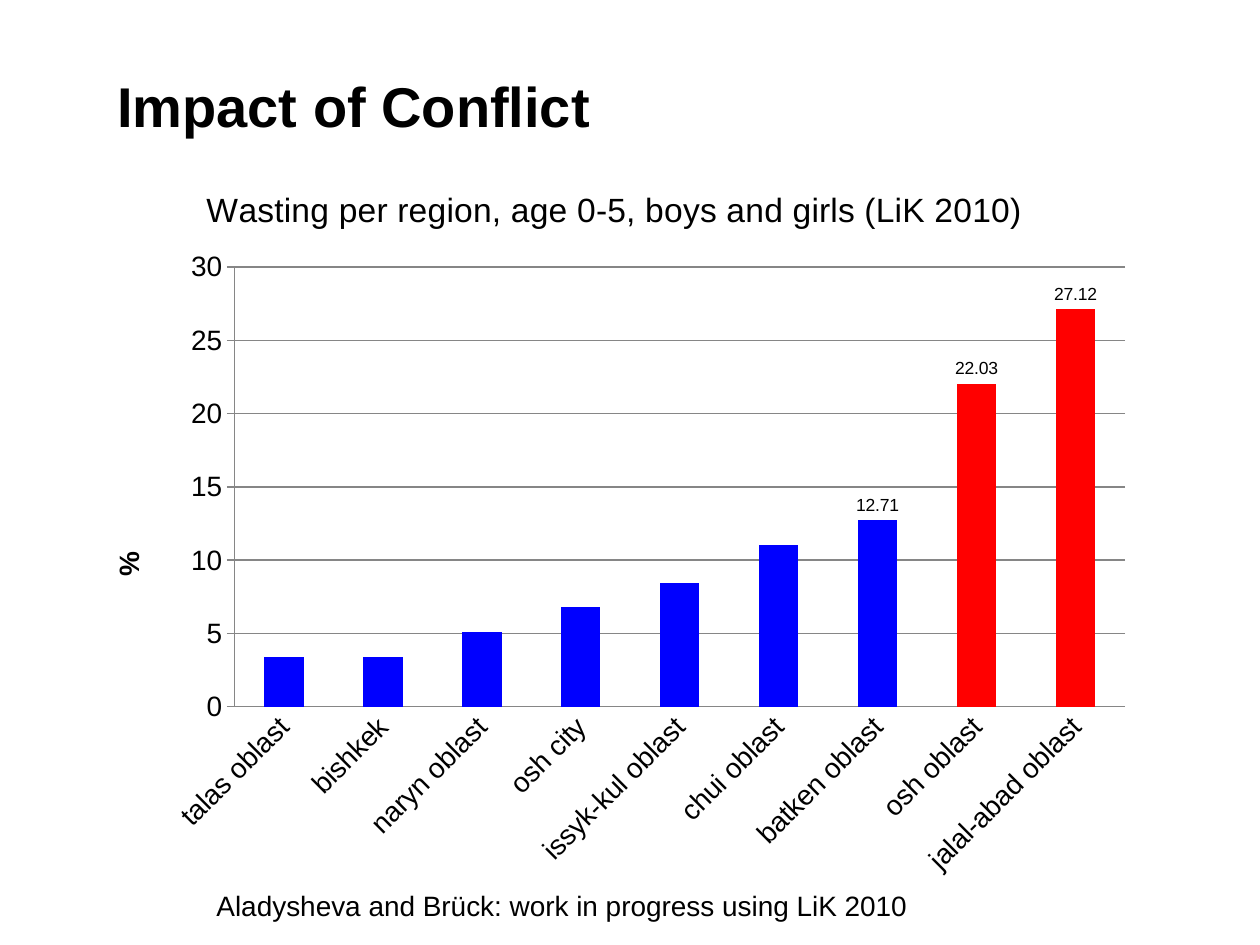
from lxml import etree
from pptx import Presentation
from pptx.chart.data import CategoryChartData
from pptx.dml.color import RGBColor
from pptx.enum import chart as ch, text as tx
from pptx.oxml import ns
from pptx.util import Inches, Pt

COLORS = {"ink": "000000", "grid": "868686", "calm": "0000FF", "clash": "FF0000"}
FONT = "Arial"
LEFT, TOP, WIDTH, HEIGHT = 0.67, 1.31, 8.43, 5.75  # chart frame, inches
RATES = {
    "talas oblast": 3.39,
    "bishkek": 3.39,
    "naryn oblast": 5.08,
    "osh city": 6.78,
    "issyk-kul oblast": 8.47,
    "chui oblast": 11.02,
    "batken oblast": 12.71,
    "osh oblast": 22.03,
    "jalal-abad oblast": 27.12,
}
LABELED = 6  # first region with a value label
CLASH = 7  # first region in the conflict area


def write(frame, words, size=16, bold=False):
    frame.text = words
    par = frame.paragraphs[0]
    font = par.runs[0].font
    font.name, font.size, font.bold = FONT, Pt(size), bold
    font.color.rgb = RGBColor.from_string(COLORS["ink"])
    return par


def place(parent, index, left, top, width=None, height=None):
    """Lay out a chart part by its place on the slide, in inches."""
    for old in parent.findall(ns.qn("c:layout")):
        parent.remove(old)
    layout = etree.Element(ns.qn("c:layout"))
    manual = etree.SubElement(layout, ns.qn("c:manualLayout"))
    spots = {"xMode": "edge", "yMode": "edge",
             "x": (left - LEFT) / WIDTH, "y": (top - TOP) / HEIGHT}
    if width:
        spots = {"layoutTarget": "inner", **spots, "w": width / WIDTH, "h": height / HEIGHT}
    for key, value in spots.items():
        etree.SubElement(manual, ns.qn(f"c:{key}"), val=str(value))
    parent.insert(index, layout)


prs = Presentation()
prs.slide_width, prs.slide_height = Inches(10), Inches(7.5)
slide = prs.slides.add_slide(prs.slide_layouts[5])

# Title
title = slide.shapes.title
title.left, title.top = Inches(0.83), Inches(0.48)
title.width, title.height = Inches(8.58), Inches(0.71)
title.text_frame.vertical_anchor = tx.MSO_ANCHOR.MIDDLE
write(title.text_frame, "Impact of Conflict", size=32, bold=True).alignment = tx.PP_ALIGN.LEFT

# Chart
data = CategoryChartData()
data.categories = list(RATES)
data.add_series("Series 1", list(RATES.values()))
chart = slide.shapes.add_chart(
    ch.XL_CHART_TYPE.COLUMN_CLUSTERED,
    Inches(LEFT), Inches(TOP), Inches(WIDTH), Inches(HEIGHT), data,
).chart
chart.has_legend = False
chart.font.name, chart.font.size = FONT, Pt(16)
chart.font.color.rgb = RGBColor.from_string(COLORS["ink"])

head = chart.chart_title
write(head.text_frame, "Wasting per region, age 0-5, boys and girls (LiK 2010)", size=19.2)
head.include_in_layout = False
place(head._element, 1, 1.59, 1.44)
place(chart._chartSpace.chart.plotArea, 0, 1.86, 2.12, 7.07, 3.49)

# Axes
regions, rate = chart.category_axis, chart.value_axis
regions.major_tick_mark = ch.XL_TICK_MARK.NONE
regions.tick_labels.font.size = Pt(16)
regions._element.txPr.bodyPr.set("rot", str(-45 * 60000))
rate.minimum_scale, rate.maximum_scale, rate.major_unit = 0, 30, 5
rate.major_tick_mark = ch.XL_TICK_MARK.CROSS
rate.has_major_gridlines = True
write(rate.axis_title.text_frame, "%", bold=True)
rate.axis_title.text_frame._txBody.bodyPr.set("rot", str(-90 * 60000))
place(rate.axis_title._element, 1, 0.84, 4.34)
for part in (regions, rate, rate.major_gridlines):
    part.format.line.color.rgb = RGBColor.from_string(COLORS["grid"])
    part.format.line.width = Pt(0.75)

# Columns
plot = chart.plots[0]
plot.vary_by_categories = False
plot.gap_width = 150
bars = plot.series[0]
bars.format.fill.solid()
bars.format.fill.fore_color.rgb = RGBColor.from_string(COLORS["calm"])
for i in range(LABELED, len(RATES)):
    point = bars.points[i]
    if i >= CLASH:
        point.format.fill.solid()
        point.format.fill.fore_color.rgb = RGBColor.from_string(COLORS["clash"])
    label = point.data_label
    label.position = ch.XL_LABEL_POSITION.OUTSIDE_END
    label.font.name, label.font.size = FONT, Pt(10)

# Source line
note = slide.shapes.add_textbox(Inches(1.62), Inches(6.98), Inches(5.76), Inches(0.4))
note.text_frame.word_wrap = False
note.text_frame.auto_size = tx.MSO_AUTO_SIZE.SHAPE_TO_FIT_TEXT
write(note.text_frame, "Aladysheva and Brück: work in progress using LiK 2010").line_spacing = 1.1

prs.save("out.pptx")
